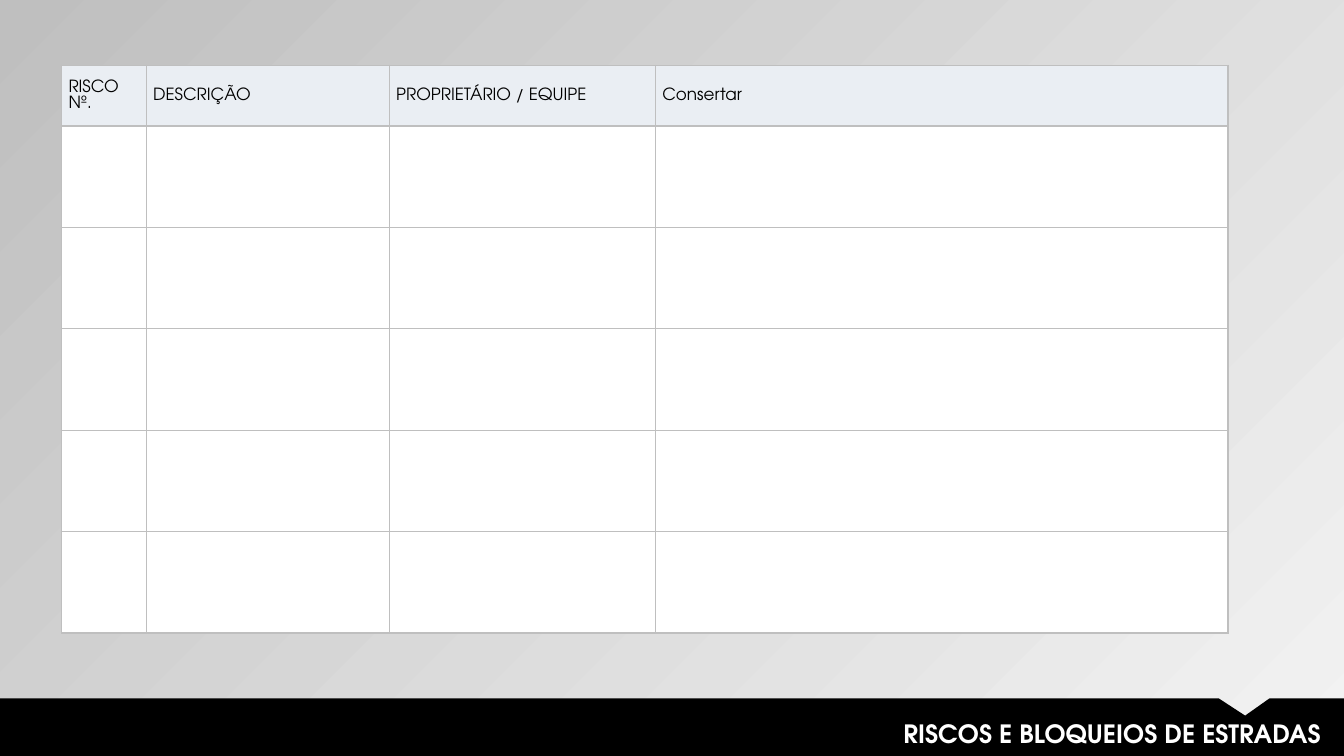
from lxml.etree import SubElement
from pptx import Presentation
from pptx.dml.color import RGBColor
from pptx.enum.text import MSO_ANCHOR, MSO_AUTO_SIZE, PP_ALIGN
from pptx.oxml.ns import qn
from pptx.util import Inches, Pt

FONT = "TeX Gyre Adventor"
BLACK = RGBColor(0x00, 0x00, 0x00)
WHITE = RGBColor(0xFF, 0xFF, 0xFF)
LIGHT = RGBColor(0xF2, 0xF2, 0xF2)
GRAY = RGBColor(0xBF, 0xBF, 0xBF)
PALE = RGBColor(0xEA, 0xEE, 0xF3)

HEADS = ["RISCO Nº.", "DESCRIÇÃO", "PROPRIETÁRIO / EQUIPE", "Consertar"]
WIDTHS = [0.84, 2.41, 2.64, 5.68]
HEIGHTS = [0.6] + [(5.63 - 0.6) / 5] * 5


def write(frame, text, size=12, color=BLACK, bold=False, align=PP_ALIGN.LEFT):
    para = frame.paragraphs[0]
    para.alignment = align
    para.line_spacing = 1.0
    run = para.add_run()
    run.text = text
    run.font.name = FONT
    run.font.size = Pt(size)
    run.font.bold = bold
    run.font.color.rgb = color


def border(cell):
    """Draw a thin gray line on all four sides of a cell."""
    props = cell._tc.get_or_add_tcPr()
    for spot, side in enumerate(["a:lnL", "a:lnR", "a:lnT", "a:lnB"]):
        line = SubElement(props, qn(side), w=str(Pt(1)))
        fill = SubElement(line, qn("a:solidFill"))
        SubElement(fill, qn("a:srgbClr"), val=str(GRAY))
        props.insert(spot, line)


prs = Presentation()
prs.slide_width = Inches(13.33)
prs.slide_height = Inches(7.5)
slide = prs.slides.add_slide(prs.slide_layouts[5])
shapes = slide.shapes

# Background
back = slide.background.fill
back.gradient()
back.gradient_angle = 135
for stop, color in zip(back.gradient_stops, [LIGHT, GRAY]):
    stop.color.rgb = color

# Risk table
table = shapes.add_table(
    len(HEIGHTS), len(WIDTHS), Inches(0.61), Inches(0.65),
    Inches(sum(WIDTHS)), Inches(sum(HEIGHTS)),
).table
table.horz_banding = False
for col, width in zip(table.columns, WIDTHS):
    col.width = Inches(width)
for row, height in zip(table.rows, HEIGHTS):
    row.height = Inches(height)
for cell in table.iter_cells():
    cell.fill.solid()
    cell.fill.fore_color.rgb = WHITE
    border(cell)
for cell, head in zip(table.rows[0].cells, HEADS):
    cell.fill.fore_color.rgb = PALE
    cell.vertical_anchor = MSO_ANCHOR.MIDDLE
    cell.margin_left = cell.margin_right = Inches(0.07)
    cell.margin_top = cell.margin_bottom = 0
    write(cell.text_frame, head)

# Black footer with a notch
path = shapes.build_freeform(0, Inches(6.93))
notch = [(12.09, 6.93), (12.35, 7.1), (12.59, 6.93), (13.33, 6.93), (13.33, 7.5), (0, 7.5)]
path.add_line_segments([(Inches(x), Inches(y)) for x, y in notch], close=True)
footer = path.convert_to_shape()
footer.shadow.inherit = False
footer.fill.solid()
footer.fill.fore_color.rgb = BLACK
footer.line.fill.background()

# Title, brought in front of the footer
title = shapes.title
title.left, title.top = Inches(4.14), Inches(7.08)
title.width, title.height = Inches(9.06), Inches(0.4)
frame = title.text_frame
frame.word_wrap = True
frame.auto_size = MSO_AUTO_SIZE.NONE
frame.vertical_anchor = MSO_ANCHOR.TOP
write(frame, "RISCOS E BLOQUEIOS DE ESTRADAS", size=18, color=WHITE, bold=True, align=PP_ALIGN.RIGHT)
footer._element.addnext(title._element)

prs.save("out.pptx")
